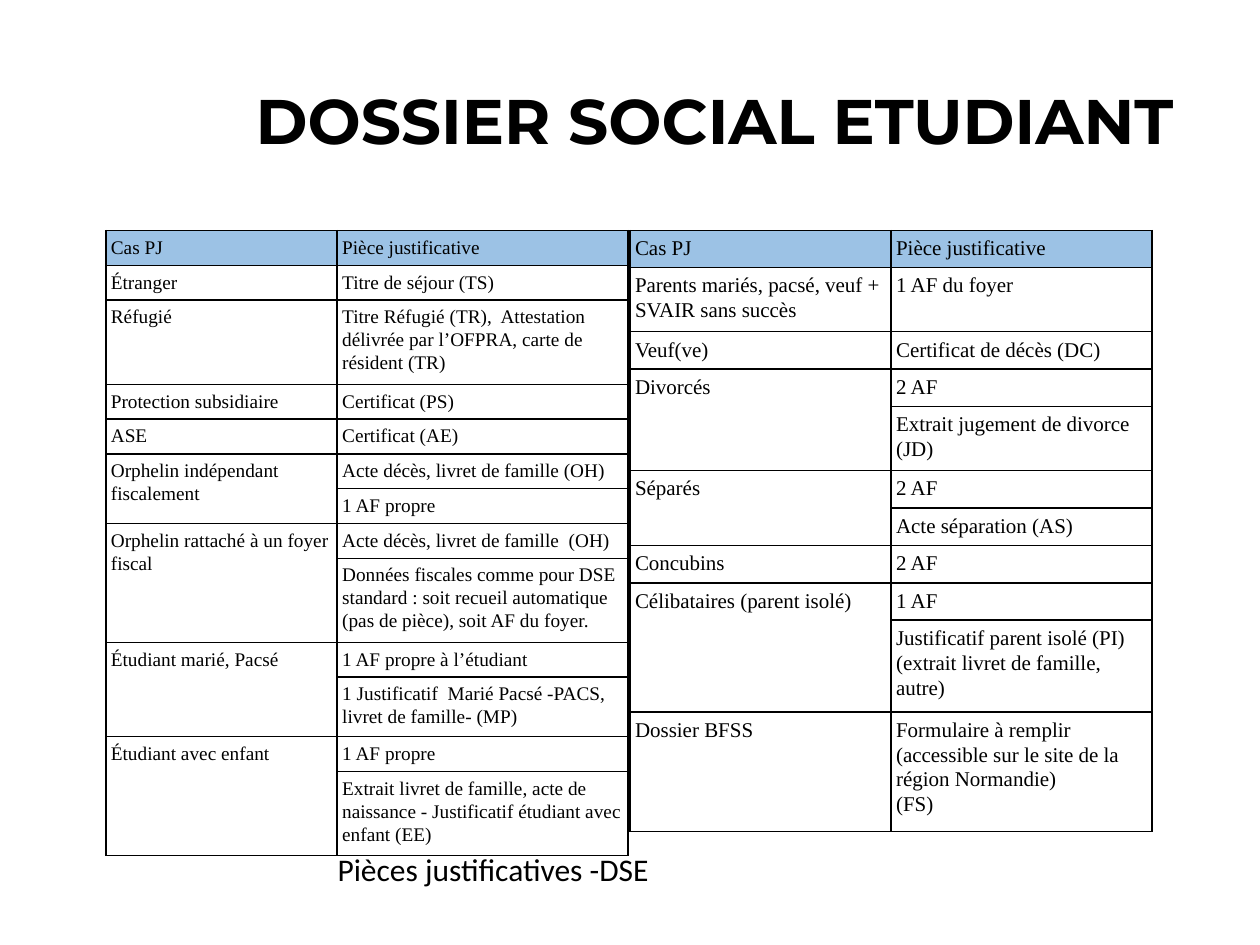
from lxml import etree
from pptx import Presentation
from pptx import util as u
from pptx.dml.color import RGBColor
from pptx.oxml import ns

BLACK, HEADER_BLUE = "000000", "9CC2E5"
HEADINGS = ("Cas PJ", ["Pièce justificative"])

STUDENT_CASES = [
    HEADINGS,
    ("Étranger", ["Titre de séjour (TS)"]),
    ("Réfugié", ["Titre Réfugié (TR),  Attestation délivrée par l’OFPRA, carte de résident (TR)"]),
    ("Protection subsidiaire", ["Certificat (PS)"]),
    ("ASE", ["Certificat (AE)"]),
    ("Orphelin indépendant fiscalement", ["Acte décès, livret de famille (OH)", "1 AF propre"]),
    ("Orphelin rattaché à un foyer fiscal", [
        "Acte décès, livret de famille  (OH)",
        "Données fiscales comme pour DSE standard : soit recueil automatique "
        "(pas de pièce), soit AF du foyer."]),
    ("Étudiant marié, Pacsé", [
        "1 AF propre à l’étudiant",
        "1 Justificatif  Marié Pacsé -PACS, livret de famille- (MP)"]),
    ("Étudiant avec enfant", [
        "1 AF propre",
        "Extrait livret de famille, acte de naissance - Justificatif étudiant avec enfant (EE)"]),
]
STUDENT_LINES = [1, 1, 3, 1, 1, 1, 1, 1, 3, 1, 2, 1, 3]
STUDENT_HEIGHTS = [5.5 + 13.1 * lines for lines in STUDENT_LINES]

PARENT_CASES = [
    HEADINGS,
    ("Parents mariés, pacsé, veuf +\nSVAIR sans succès", ["1 AF du foyer"]),
    ("Veuf(ve)", ["Certificat de décès (DC)"]),
    ("Divorcés", ["2 AF", "Extrait jugement de divorce (JD)"]),
    ("Séparés", ["2 AF", "Acte séparation (AS)"]),
    ("Concubins", ["2 AF"]),
    ("Célibataires (parent isolé)", [
        "1 AF",
        "Justificatif parent isolé (PI) (extrait livret de famille, autre)"]),
    ("Dossier BFSS", [
        "Formulaire à remplir (accessible sur le site de la région Normandie)\n(FS)"]),
]
PARENT_HEIGHTS = [20.2, 36.6, 21.4, 21.4, 36.6, 21.4, 21.4, 21.4, 21.4, 52.4, 68.4]


def color(value):
    return RGBColor.from_string(value)


class SlideWriter:
    """Holds the table style and the current slide."""

    table_font = "Times New Roman"
    cell_inset = 2.88
    line_spacing = 1.07
    border_width = 1

    def __init__(self, slide):
        self.slide = slide

    def set_font(self, para, name, size, bold=False):
        para.font.name = name
        para.font.size = u.Pt(size)
        para.font.bold = bold
        para.font.color.rgb = color(BLACK)

    def text(self, words, left, top, width, height, name, size, bold=False):
        box = self.slide.shapes.add_textbox(*map(u.Pt, (left, top, width, height)))
        box.text_frame.word_wrap = True
        box.text_frame.text = words
        self.set_font(box.text_frame.paragraphs[0], name, size, bold)

    def borders(self, cell):
        properties = cell._tc.get_or_add_tcPr()
        for side in ("lnL", "lnR", "lnT", "lnB"):
            line = etree.SubElement(properties, ns.qn(f"a:{side}"), w=str(u.Pt(self.border_width)))
            fill = etree.SubElement(line, ns.qn("a:solidFill"))
            etree.SubElement(fill, ns.qn("a:srgbClr"), val=BLACK)

    def cell(self, cell, words, size, is_header):
        cell.text = words
        cell.margin_left = cell.margin_right = u.Pt(self.cell_inset)
        cell.margin_top = cell.margin_bottom = u.Pt(self.cell_inset)
        for para in cell.text_frame.paragraphs:
            para.line_spacing = self.line_spacing
            self.set_font(para, self.table_font, size)
        self.borders(cell)
        if is_header:
            cell.fill.solid()
            cell.fill.fore_color.rgb = color(HEADER_BLUE)
        else:
            cell.fill.background()

    def table(self, cases, left, top, widths, heights, size):
        frame = self.slide.shapes.add_table(
            len(heights), len(widths), u.Pt(left), u.Pt(top),
            u.Pt(sum(widths)), u.Pt(sum(heights)))
        table = frame.table
        table.horz_banding = table.first_row = False
        for column, width in zip(table.columns, widths):
            column.width = u.Pt(width)
        for row, height in zip(table.rows, heights):
            row.height = u.Pt(height)
        start = 0
        for case, documents in cases:
            for offset, document in enumerate(documents):
                row = start + offset
                self.cell(table.cell(row, 0), "" if offset else case, size, row == 0)
                self.cell(table.cell(row, 1), document, size, row == 0)
            if len(documents) > 1:
                table.cell(start, 0).merge(table.cell(row, 0))
            start += len(documents)


def main():
    deck = Presentation()
    deck.slide_width, deck.slide_height = u.Pt(720), u.Pt(540)
    page = SlideWriter(deck.slides.add_slide(deck.slide_layouts[6]))
    page.text("DOSSIER SOCIAL ETUDIANT", 139, 43, 551.5, 89, "Montserrat", 36, bold=True)
    page.table(STUDENT_CASES, 60.5, 131.8, [132.2, 166.2], STUDENT_HEIGHTS, 11)
    page.table(PARENT_CASES, 360, 131.8, [149.2, 149.2], PARENT_HEIGHTS, 12)
    page.text("Pièces justificatives -DSE", 185.8, 482.4, 391, 29, "Calibri", 18)
    deck.save("out.pptx")


if __name__ == "__main__":
    main()
